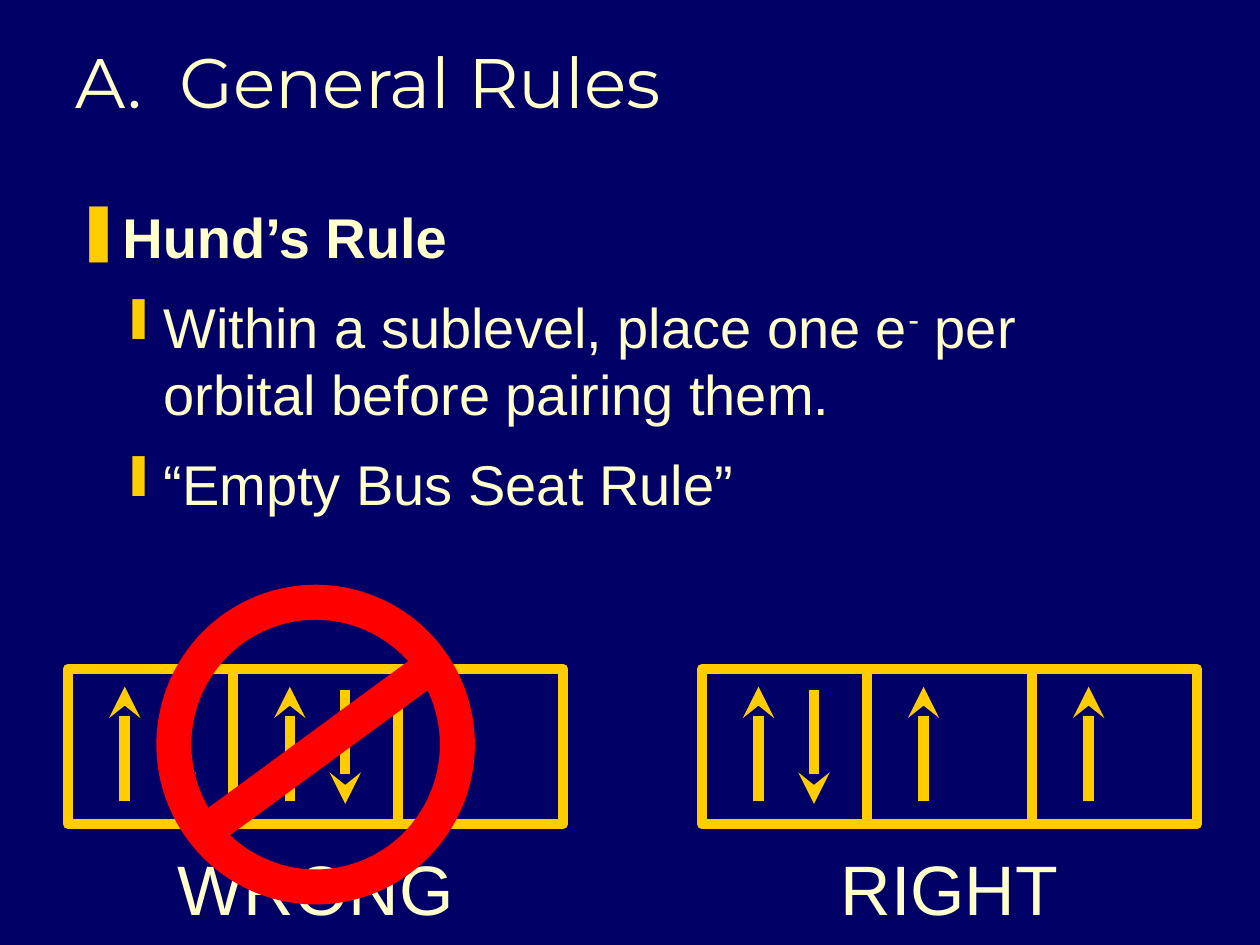
from lxml.etree import SubElement
from pptx import Presentation
from pptx.dml.color import RGBColor
from pptx.enum.shapes import MSO_CONNECTOR, MSO_SHAPE
from pptx.enum.text import MSO_ANCHOR, PP_ALIGN
from pptx.oxml.ns import qn
from pptx.util import Inches, Pt

COLORS = {"navy": "000066", "gold": "FFCC00", "cream": "FFFFCC", "red": "FF0000"}
CELL_W, CELL_H = 1.31, 1.23
ARROW_X = {"up": 0.45, "down": 0.89}
ARROW_Y = {"up": (1.05, 0.14), "down": (0.17, 1.07)}
BODY = [
    (0, "❚", 0.31, -0.31, [("Hund’s Rule", {"bold": True})]),
    (1, "❙", 0.7, -0.26, [
        ("Within a sublevel, place one e", {}),
        ("-", {"baseline": 30000}),
        (" per orbital before pairing them.", {}),
    ]),
    (1, "❙", 0.7, -0.26, [("“Empty Bus Seat Rule”", {})]),
]


def rgb(name):
    """Return the named colour."""
    return RGBColor.from_string(COLORS[name])


def add_run(p, text, size=32, font="Arial", color="cream", bold=False, baseline=0):
    """Add one formatted run to a paragraph."""
    r = p.add_run()
    r.text = text
    r.font.size = Pt(size)
    r.font.name = font
    r.font.bold = bold
    r.font.color.rgb = rgb(color)
    if baseline:
        r.font._element.set("baseline", str(baseline))


def add_frame(s, x, y, w, h, anchor=MSO_ANCHOR.TOP):
    """Add a wrapping text box and return its frame."""
    tf = s.shapes.add_textbox(Inches(x), Inches(y), Inches(w), Inches(h)).text_frame
    tf.word_wrap = True
    tf.vertical_anchor = anchor
    return tf


def add_line(s, x1, y1, x2, y2, color, width, arrow=False):
    """Add a straight line, with a stealth head if asked."""
    c = s.shapes.add_connector(
        MSO_CONNECTOR.STRAIGHT, Inches(x1), Inches(y1), Inches(x2), Inches(y2))
    c.line.color.rgb = rgb(color)
    c.line.width = Pt(width)
    if arrow:
        SubElement(c.line._get_or_add_ln(), qn("a:tailEnd"), type="stealth")
    SubElement(c._element.spPr, qn("a:effectLst"))


def add_outline(s, kind, x, y, w, h, color, width):
    """Add an unfilled outlined shape."""
    sp = s.shapes.add_shape(kind, Inches(x), Inches(y), Inches(w), Inches(h))
    sp.shadow.inherit = False
    sp.fill.background()
    sp.line.color.rgb = rgb(color)
    sp.line.width = Pt(width)


def add_title(s, x, y, w, h):
    """Place the slide title."""
    tf = add_frame(s, x, y, w, h, MSO_ANCHOR.BOTTOM)
    add_run(tf.paragraphs[0], "A.  General Rules", size=40, font="Montserrat")


def add_body(s, x, y, w, h):
    """Place the bulleted rule text."""
    tf = add_frame(s, x, y, w, h)
    for i, (level, bullet, margin, indent, runs) in enumerate(BODY):
        p = tf.add_paragraph() if i else tf.paragraphs[0]
        p.level = level
        if i:
            p.space_before = Pt(12.8)
        pPr = p._p.get_or_add_pPr()
        pPr.set("marL", str(Inches(margin)))
        pPr.set("indent", str(Inches(indent)))
        color = SubElement(pPr, qn("a:buClr"))
        SubElement(color, qn("a:srgbClr"), val=COLORS["gold"])
        SubElement(pPr, qn("a:buChar"), char=bullet)
        for text, fmt in runs:
            add_run(p, text, **fmt)


def add_orbitals(s, x, y, label, cells):
    """Place a row of orbital boxes with electron arrows and a label."""
    for i, spins in enumerate(cells):
        left = x + i * CELL_W
        for spin in spins:
            ax = left + ARROW_X[spin]
            start, end = ARROW_Y[spin]
            add_line(s, ax, y + start, ax, y + end, "gold", 6, arrow=True)
        add_outline(s, MSO_SHAPE.RECTANGLE, left, y, CELL_W, CELL_H, "gold", 6)
    tf = add_frame(s, x, y + 1.15, len(cells) * CELL_W, 0.97)
    p = tf.paragraphs[0]
    p.alignment = PP_ALIGN.CENTER
    p.line_spacing = 1.3
    add_run(p, label, size=40)


def add_prohibition(s, x, y, w, h):
    """Place the red prohibition sign."""
    add_outline(s, MSO_SHAPE.OVAL, x, y, w, h, "red", 20)
    add_line(s, x + 0.25, y + 1.82, x + 2.05, y + 0.5, "red", 20)


def main():
    """Build and save the slide."""
    prs = Presentation()
    prs.slide_width, prs.slide_height = Inches(10), Inches(7.5)
    s = prs.slides.add_slide(prs.slide_layouts[6])
    s.background.fill.solid()
    s.background.fill.fore_color.rgb = rgb("navy")
    add_title(s, 0.5, 0.16, 8.44, 0.86)
    add_body(s, 0.5, 1.56, 8.94, 3.05)
    add_orbitals(s, 0.54, 5.31, "WRONG", [("up", "down"), ("up", "down"), ()])
    add_orbitals(s, 5.57, 5.31, "RIGHT", [("up", "down"), ("up",), ("up",)])
    add_prohibition(s, 1.38, 4.78, 2.25, 2.26)
    prs.save("out.pptx")


if __name__ == "__main__":
    main()
